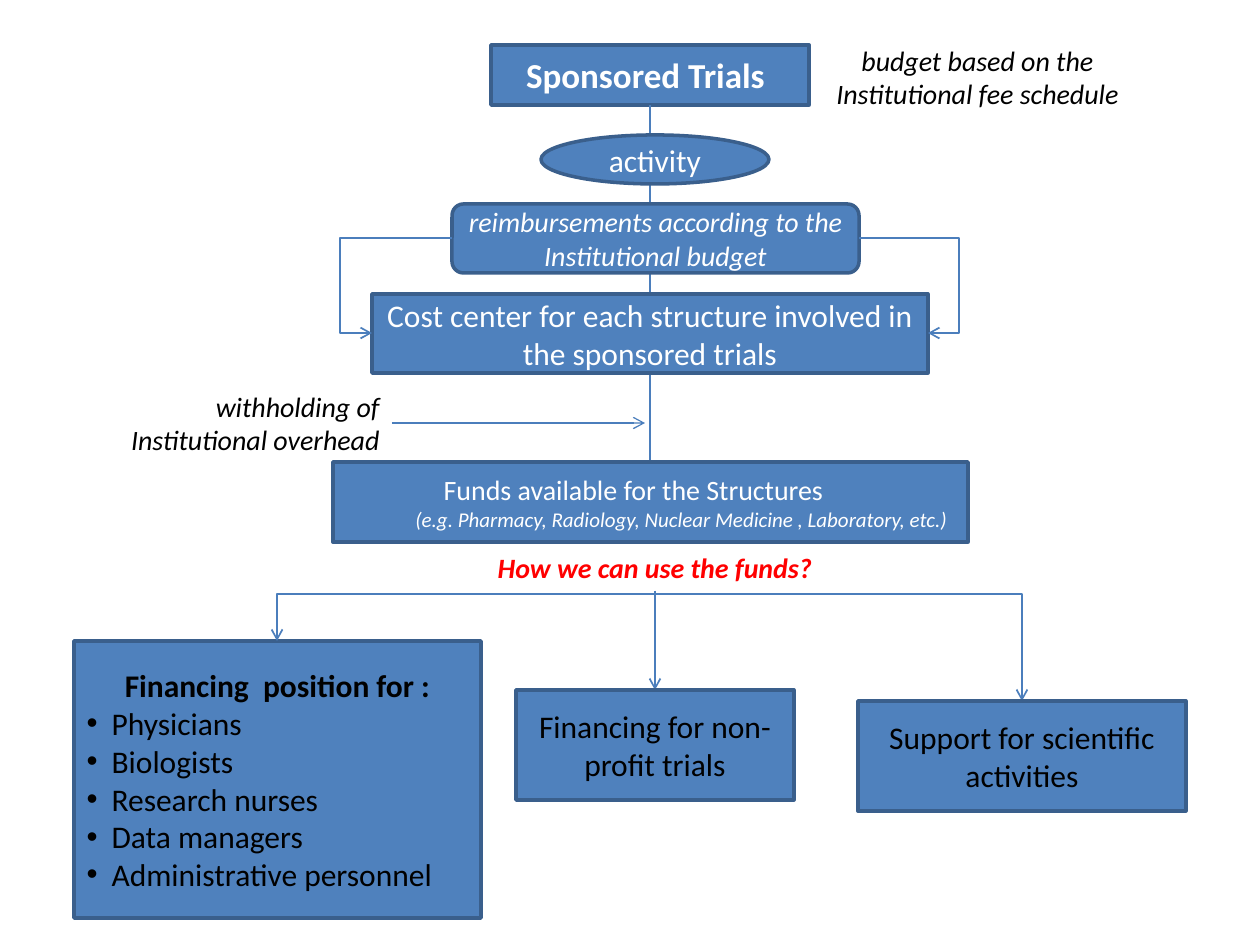
import dataclasses

import pptx
import pptx.dml.color
import pptx.enum.shapes
import pptx.enum.text
import pptx.oxml.ns
import pptx.util
from lxml import etree

SHAPE = pptx.enum.shapes.MSO_SHAPE
CONNECTOR = pptx.enum.shapes.MSO_CONNECTOR
ALIGN = pptx.enum.text.PP_ALIGN
ANCHOR = pptx.enum.text.MSO_ANCHOR
qn = pptx.oxml.ns.qn


@dataclasses.dataclass(frozen=True)
class Theme:
    font: str = "Calibri"
    fill: str = "4F81BD"
    border: str = "3A5F8C"
    line: str = "4B7EBC"
    light: str = "FFFFFF"
    dark: str = "000000"
    accent: str = "FF0000"
    title: int = 20
    body: int = 18
    note: int = 16
    small: int = 12


@dataclasses.dataclass(frozen=True)
class Box:
    x: int
    y: int
    w: int
    h: int

    def inner(self, dx, dy, w, h):
        return Box(self.x + dx, self.y + dy, w, h)

    @property
    def cx(self):
        return self.x + self.w // 2

    @property
    def cy(self):
        return self.y + self.h // 2

    @property
    def right(self):
        return self.x + self.w

    @property
    def bottom(self):
        return self.y + self.h


THEME = Theme()


def px(n):
    return pptx.util.Emu(round(n * 914400 / 126))


def rgb(color):
    return pptx.dml.color.RGBColor.from_string(color)


def write(tf, text, size=THEME.body, color=THEME.light, bold=False, italic=False,
          align=ALIGN.CENTER, left=0, right=0, hanging=0, bullet=False):
    """Add a paragraph, filling the first one while it is still empty."""
    p = tf.paragraphs[-1] if not tf.text else tf.add_paragraph()
    p.alignment = align
    p.space_before = pptx.util.Pt(0)
    pPr = p._p.get_or_add_pPr()
    for name, value in (("marL", left), ("marR", right), ("indent", -hanging)):
        pPr.set(name, str(px(value)))
    if not bullet:
        etree.SubElement(pPr, qn("a:buNone"))
    r = p.add_run()
    r.text = text
    r.font.name = THEME.font
    r.font.size = pptx.util.Pt(size)
    r.font.bold = bold
    r.font.italic = italic
    r.font.color.rgb = rgb(color)


def style_block(sp):
    sp.shadow.inherit = False
    sp.fill.solid()
    sp.fill.fore_color.rgb = rgb(THEME.fill)
    sp.line.color.rgb = rgb(THEME.border)
    sp.line.width = pptx.util.Pt(2)
    tf = sp.text_frame
    tf.word_wrap = True
    tf.auto_size = pptx.enum.text.MSO_AUTO_SIZE.NONE
    tf.vertical_anchor = ANCHOR.MIDDLE
    return tf


def block_placeholder(sp, box):
    sp.left, sp.top, sp.width, sp.height = map(px, (box.x, box.y, box.w, box.h))
    return style_block(sp)


def block(slide, box, kind=SHAPE.RECTANGLE):
    sp = slide.shapes.add_shape(kind, *map(px, (box.x, box.y, box.w, box.h)))
    return style_block(sp)


def label(slide, box, text, **fmt):
    sp = slide.shapes.add_textbox(*map(px, (box.x, box.y, box.w, box.h)))
    sp.text_frame.word_wrap = True
    write(sp.text_frame, text, size=THEME.note, **fmt)


def connect(slide, start, end, kind=CONNECTOR.STRAIGHT, width=1, arrow=False):
    c = slide.shapes.add_connector(kind, *map(px, (*start, *end)))
    c.line.color.rgb = rgb(THEME.line)
    c.line.width = pptx.util.Pt(width)
    spPr = c._element.spPr
    if arrow:
        etree.SubElement(spPr.find(qn("a:ln")), qn("a:tailEnd"), type="arrow")
    etree.SubElement(spPr, qn("a:effectLst"))
    return c


def bend(c, ratio):
    """Place the middle leg of an elbow at a share of its length."""
    guides = c._element.spPr.find(qn("a:prstGeom")).get_or_add_avLst()
    etree.SubElement(guides, qn("a:gd"), name="adj1", fmla=f"val {round(ratio * 100000)}")


def side_elbow(slide, start, end, rail):
    c = connect(slide, start, end, CONNECTOR.ELBOW, arrow=True)
    bend(c, (rail - start[0]) / (end[0] - start[0]))


def down_elbow(slide, start, end, rail):
    """Leave downwards, run along the rail height, then drop to the end."""
    (x1, y1), (x2, y2) = start, end
    cx, cy = (x1 + x2) / 2, (y1 + y2) / 2
    half_w, half_h = (y2 - y1) / 2, abs(x2 - x1) / 2
    if x2 > x1:
        half_w, angle = -half_w, 270
    else:
        angle = 90
    c = connect(slide, (cx - half_w, cy - half_h), (cx + half_w, cy + half_h),
                CONNECTOR.ELBOW, arrow=True)
    c._element.spPr.find(qn("a:xfrm")).set("rot", str(angle * 60000))
    bend(c, (rail - y1) / (y2 - y1))


def funding_flow(slide, box):
    def centred(dy, w, h, shift=0):
        return box.inner((box.w - w) // 2 + shift, dy, w, h)

    title = centred(0, 318, 60)
    activity = centred(90, 228, 49, shift=5)
    refund = centred(159, 407, 69, shift=5)
    cost = centred(249, 556, 79)
    funds = centred(417, box.w, 80)

    connect(slide, (box.cx, title.bottom), (box.cx, cost.y), width=0.75)
    connect(slide, (box.cx, cost.bottom), (box.cx, funds.y))

    write(block_placeholder(slide.shapes.title, title), "Sponsored Trials",
          size=THEME.title, bold=True, right=9)
    write(block(slide, activity, SHAPE.OVAL), "activity")
    write(block(slide, refund, SHAPE.ROUNDED_RECTANGLE),
          "reimbursements according to the Institutional budget",
          size=THEME.note, italic=True)
    write(block(slide, cost),
          "Cost center for each structure involved in the sponsored trials")
    tf = block(slide, funds)
    write(tf, "Funds available for the Structures", size=THEME.note, right=34)
    write(tf, "(e.g. Pharmacy, Radiology, Nuclear Medicine , Laboratory, etc.)",
          size=THEME.small, italic=True, left=62)

    side_elbow(slide, (refund.x, refund.cy), (cost.x, cost.cy), cost.x - 32)
    side_elbow(slide, (refund.right, refund.cy), (cost.right, cost.cy), cost.right + 31)


def overhead_note(slide, box):
    note = box.inner(0, 0, 297, box.h)
    label(slide, note, "withholding of Institutional overhead",
          color=THEME.dark, italic=True, align=ALIGN.RIGHT)
    connect(slide, (note.right, box.cy), (box.right, box.cy), width=0.75, arrow=True)


def fund_uses(slide, box):
    question = box.inner(367, 0, 428, 47)
    positions = box.inner(0, 97, 407, 277)
    trials = box.inner(442, 146, 278, 110)
    science = box.inner(784, 157, 328, 110)

    label(slide, question, "How we can use the funds?",
          color=THEME.accent, bold=True, italic=True)
    hub = (question.cx, question.bottom)
    for target in (positions, science):
        down_elbow(slide, hub, (target.cx, target.y), question.bottom + 3)
    connect(slide, hub, (hub[0], trials.y), arrow=True)

    tf = block_placeholder(slide.placeholders[1], positions)
    write(tf, "Financing  position for :", color=THEME.dark, bold=True)
    for role in ("Physicians", "Biologists", "Research nurses", "Data managers",
                 "Administrative personnel"):
        write(tf, role, color=THEME.dark, align=ALIGN.LEFT,
              left=25, hanging=25, bullet=True)
    write(block(slide, trials), "Financing for non-profit trials", color=THEME.dark)
    write(block(slide, science), "Support for scientific activities", color=THEME.dark)


def main():
    prs = pptx.Presentation()
    prs.slide_width, prs.slide_height = px(1260), px(945)
    slide = prs.slides.add_slide(prs.slide_layouts[1])
    funding_flow(slide, Box(333, 45, 635, 497))
    label(slide, Box(789, 37, 377, 81), "budget based on the Institutional fee schedule",
          color=THEME.dark, italic=True)
    overhead_note(slide, Box(95, 383, 550, 81))
    fund_uses(slide, Box(74, 544, 1112, 374))
    prs.save("out.pptx")


if __name__ == "__main__":
    main()
